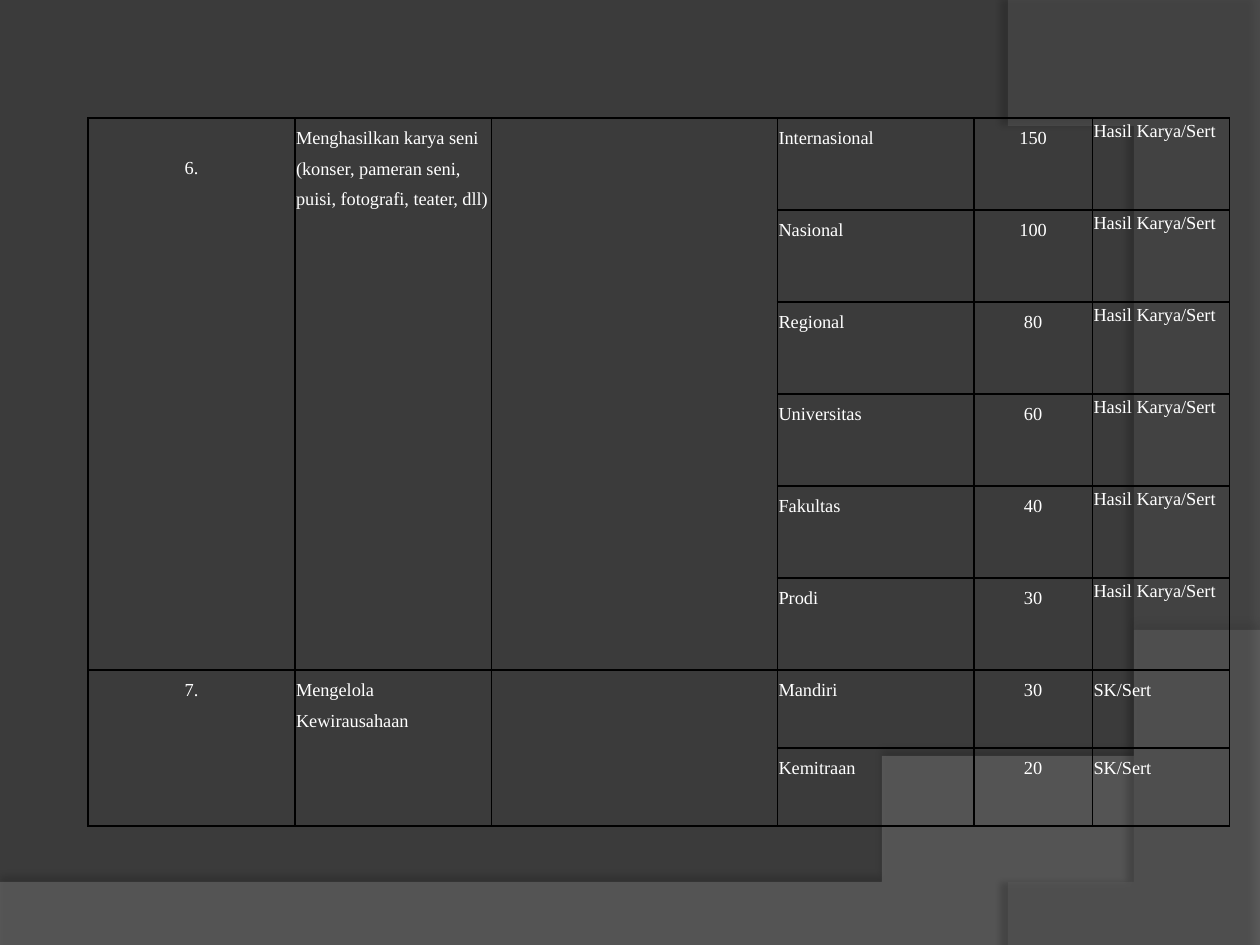
from dataclasses import dataclass

from lxml.etree import SubElement
from pptx import Presentation
from pptx.dml.color import RGBColor
from pptx.enum.text import PP_ALIGN as Align
from pptx.oxml import parse_xml
from pptx.oxml.ns import nsdecls, qn
from pptx.util import Inches, Pt

WIDTH, HEIGHT = 10, 7.5
BACKGROUND = RGBColor(0x3B, 0x3B, 0x3B)
WAVE_GRAY = RGBColor(0x7F, 0x7F, 0x7F)
ARC_GRAY = RGBColor(0x5E, 0x5E, 0x5E)
BLACK = RGBColor(0, 0, 0)
WHITE = RGBColor(0xFF, 0xFF, 0xFF)
FONT = "Times New Roman"
COLUMNS = (1.64, 1.56, 2.27, 1.56, 0.94, 1.09)
CURVE_STEPS = 40


@dataclass(frozen=True)
class Swoosh:
    """A translucent panel: a Bezier edge closed through the slide's corners."""
    curve: tuple
    corners: tuple
    color: RGBColor
    opacity: int
    shadow_opacity: int
    shadow_distance: float
    shadow_angle: int


@dataclass(frozen=True)
class Activity:
    """A numbered activity with its levels and points."""
    number: str
    name: str
    levels: tuple
    evidence: str
    row_height: float
    evidence_spacing: float
    number_top: float


SWOOSHES = (
    Swoosh(((10, 5.2), (5.59, 7.29), (3.91, 7.19), (0, 7.05)),
           ((0, HEIGHT), (WIDTH, HEIGHT)), WAVE_GRAY, 45, 35, 3.5, 270),
    Swoosh(((8.21, 7.5), (9.35, 6.19), (10.18, 3), (8, 0)),
           ((WIDTH, 0.02), (WIDTH, HEIGHT)), ARC_GRAY, 40, 45, 4, 180),
)
ACTIVITIES = (
    Activity("6.", "Menghasilkan karya seni (konser, pameran seni, puisi, fotografi, teater, dll)",
             (("Internasional", 150), ("Nasional", 100), ("Regional", 80),
              ("Universitas", 60), ("Fakultas", 40), ("Prodi", 30)),
             "Hasil Karya/Sert", 0.73, 1.15, 0.24),
    Activity("7.", "Mengelola Kewirausahaan", (("Mandiri", 30), ("Kemitraan", 20)),
             "SK/Sert", 0.62, 1.5, 0),
)


def bezier_points(curve: tuple) -> list:
    """Sample a cubic Bezier curve at equal steps."""
    points = []
    for step in range(CURVE_STEPS + 1):
        t = step / CURVE_STEPS
        weights = ((1 - t) ** 3, 3 * t * (1 - t) ** 2, 3 * t * t * (1 - t), t ** 3)
        points.append(tuple(sum(w * point[axis] for w, point in zip(weights, curve))
                            for axis in (0, 1)))
    return points


def draw_swoosh(slide, swoosh: Swoosh) -> None:
    """Draw one panel with its transparency and shadow."""
    start, *rest = bezier_points(swoosh.curve)
    builder = slide.shapes.build_freeform(*start, scale=Inches(1))
    builder.add_line_segments([*rest, *swoosh.corners], close=True)
    shape = builder.convert_to_shape()
    shape.line.fill.background()
    shape.fill.solid()
    shape.fill.fore_color.rgb = swoosh.color
    properties = shape.element.spPr
    color = properties.find(qn("a:solidFill"))[0]
    SubElement(color, qn("a:alpha"), val=str(swoosh.opacity * 1000))
    properties.append(parse_xml(
        f'<a:effectLst {nsdecls("a")}><a:outerShdw blurRad="{Pt(4)}" '
        f'dist="{Pt(swoosh.shadow_distance)}" dir="{swoosh.shadow_angle * 60000}" '
        f'algn="ctr" rotWithShape="0"><a:srgbClr val="{BLACK}">'
        f'<a:alpha val="{swoosh.shadow_opacity * 1000}"/></a:srgbClr>'
        '</a:outerShdw></a:effectLst>'))


def style_cell(cell) -> None:
    """Give a cell thin margins, black borders and no fill."""
    cell.margin_left = cell.margin_right = Inches(0.01)
    cell.margin_top = cell.margin_bottom = 0
    cell.fill.background()
    properties = cell._tc.get_or_add_tcPr()
    for index, side in enumerate("LRTB"):
        properties.insert(index, parse_xml(
            f'<a:ln{side} {nsdecls("a")} w="{Pt(1)}"><a:solidFill>'
            f'<a:srgbClr val="{BLACK}"/></a:solidFill></a:ln{side}>'))


def write_cell(cell, text: str, align: Align = Align.LEFT, spacing: float = 1.5) -> None:
    """Write one paragraph of table text."""
    cell.text = text
    paragraph = cell.text_frame.paragraphs[0]
    paragraph.alignment = align
    paragraph.line_spacing = spacing
    font = paragraph.font
    font.name, font.size = FONT, Pt(10.5)
    font.color.rgb = WHITE


def fill_activity(table, top: int, activity: Activity) -> None:
    """Fill the rows of one activity, merging its first three columns."""
    bottom = top + len(activity.levels) - 1
    for column in range(3):
        table.cell(top, column).merge(table.cell(bottom, column))
    number_cell = table.cell(top, 0)
    write_cell(number_cell, activity.number, Align.CENTER)
    number_cell.margin_top = Inches(activity.number_top)
    write_cell(table.cell(top, 1), activity.name)
    for row, (level, points) in enumerate(activity.levels, top):
        table.rows[row].height = Inches(activity.row_height)
        write_cell(table.cell(row, 3), level)
        write_cell(table.cell(row, 4), str(points), Align.CENTER)
        write_cell(table.cell(row, 5), activity.evidence, spacing=activity.evidence_spacing)


def draw_table(slide) -> None:
    """Draw the table of activities and points."""
    row_count = sum(len(activity.levels) for activity in ACTIVITIES)
    height = sum(len(activity.levels) * activity.row_height for activity in ACTIVITIES)
    table = slide.shapes.add_table(
        row_count, len(COLUMNS), Inches(0.07 * WIDTH), Inches(0.125 * HEIGHT),
        Inches(sum(COLUMNS)), Inches(height)).table
    table.first_row = table.horz_banding = False
    for column, width in zip(table.columns, COLUMNS):
        column.width = Inches(width)
    for cell in table.iter_cells():
        style_cell(cell)
    top = 0
    for activity in ACTIVITIES:
        fill_activity(table, top, activity)
        top += len(activity.levels)


def main() -> None:
    """Build and save the slide."""
    presentation = Presentation()
    presentation.slide_width, presentation.slide_height = Inches(WIDTH), Inches(HEIGHT)
    slide = presentation.slides.add_slide(presentation.slide_layouts[6])
    slide.background.fill.solid()
    slide.background.fill.fore_color.rgb = BACKGROUND
    for swoosh in SWOOSHES:
        draw_swoosh(slide, swoosh)
    draw_table(slide)
    presentation.save("out.pptx")


if __name__ == "__main__":
    main()
